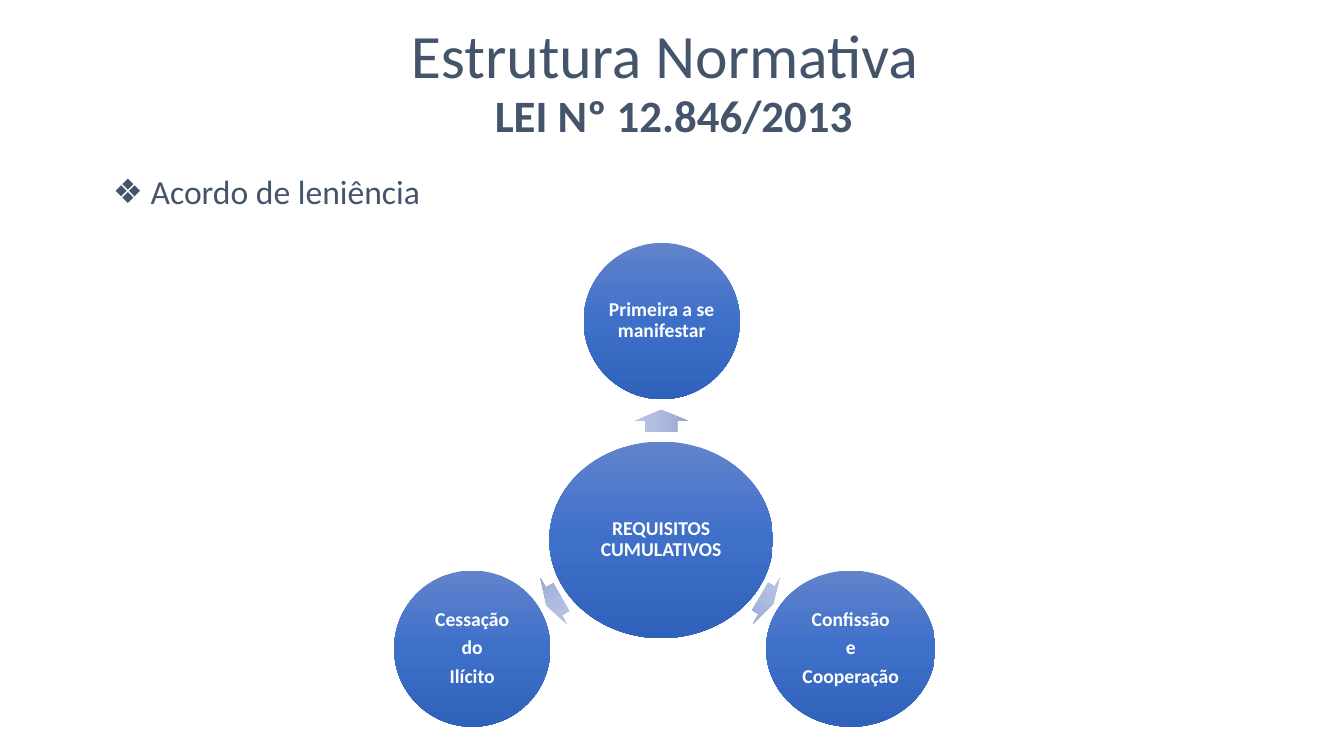
from copy import deepcopy
from typing import NamedTuple

from lxml import etree
from pptx import Presentation
from pptx.dml.color import RGBColor
from pptx.enum.shapes import MSO_SHAPE
from pptx.enum.text import MSO_ANCHOR, MSO_AUTO_SIZE, PP_ALIGN
from pptx.oxml.ns import qn
from pptx.util import Pt

ELLIPSE, ARROW = MSO_SHAPE.OVAL, MSO_SHAPE.RIGHT_ARROW
CENTER, LEFT = PP_ALIGN.CENTER, PP_ALIGN.LEFT
TOP, MIDDLE = MSO_ANCHOR.TOP, MSO_ANCHOR.MIDDLE
NO_AUTOFIT = MSO_AUTO_SIZE.NONE

FONT = "Calibri"
SLATE, WHITE = "44546A", "FFFFFF"
CIRCLE_GRADIENT = ("6183CB", "3E70CA", "3062BB")
ARROW_GRADIENT = ("BBC5E3", "AEBBE0", "97A5CA")
HEADING_FORMAT = {"alignment": CENTER, "line_spacing": 1.0, "space_before": Pt(0)}
LIST_FORMAT = {"alignment": LEFT, "line_spacing": 1.0, "space_before": Pt(4.8)}
CIRCLE_FORMAT = {"alignment": CENTER, "line_spacing": 0.9, "space_after": Pt(4.9)}
LIST_INDENT = Pt(27)


class Box(NamedTuple):
    left: float
    top: float
    width: float
    height: float


class Circle(NamedTuple):
    box: Box
    lines: tuple[str, ...]


class Spoke(NamedTuple):
    arrow: Box
    rotation: float
    circle: Circle


HUB = Circle(Box(392.4, 315.4, 159.8, 140.4), ("REQUISITOS CUMULATIVOS",))
SPOKES = (
    Spoke(Box(464.4, 281.5, 15.8, 38.2), 270,
          Circle(Box(416.9, 173.5, 111.6, 111.6), ("Primeira a se manifestar",))),
    Spoke(Box(542.2, 409.7, 10.8, 38.2), 30,
          Circle(Box(547.2, 407.5, 121, 111.6), ("Confissão", "e", "Cooperação"))),
    Spoke(Box(389.5, 410.4, 12.2, 38.2), 150,
          Circle(Box(281.5, 407.5, 111.6, 111.6), ("Cessação", "do", "Ilícito"))),
)


def color(value: str) -> RGBColor:
    return RGBColor.from_string(value)


def points(box: Box) -> list[Pt]:
    return [Pt(length) for length in box]


def place(shape, box: Box) -> None:
    shape.left, shape.top, shape.width, shape.height = points(box)


def write(shape, lines: tuple[str, ...], size: float, font_color: str,
          paragraph_format: dict, bold: bool = False, anchor=TOP) -> None:
    frame = shape.text_frame
    frame.text = "\n".join(lines)
    frame.word_wrap = True
    frame.auto_size = NO_AUTOFIT
    frame.vertical_anchor = anchor
    for paragraph in frame.paragraphs:
        for name, value in paragraph_format.items():
            setattr(paragraph, name, value)
        for run in paragraph.runs:
            for name, value in {"name": FONT, "size": Pt(size), "bold": bold}.items():
                setattr(run.font, name, value)
            run.font.color.rgb = color(font_color)


def set_bullet(paragraph, character: str) -> None:
    properties = paragraph._p.get_or_add_pPr()
    properties.set("marL", str(LIST_INDENT))
    properties.set("indent", str(-LIST_INDENT))
    etree.SubElement(properties, qn("a:buChar")).set("char", character)


def fill_gradient(shape, colors: tuple[str, ...]) -> None:
    """Fill from top to bottom with evenly spaced colours."""
    fill = shape.fill
    fill.gradient()
    fill.gradient_angle = 270
    stop_list = shape.element.spPr.find(qn("a:gradFill")).find(qn("a:gsLst"))
    while len(stop_list) < len(colors):
        stop_list.append(deepcopy(stop_list[0]))
    for index, (stop, value) in enumerate(zip(fill.gradient_stops, colors)):
        stop.position = index / (len(colors) - 1)
        stop.color.rgb = color(value)


def add_gradient_shape(slide, kind, box: Box, colors: tuple[str, ...]):
    shape = slide.shapes.add_shape(kind, *points(box))
    shape.shadow.inherit = False
    shape.line.fill.background()
    fill_gradient(shape, colors)
    return shape


def add_circle(slide, circle: Circle) -> None:
    shape = add_gradient_shape(slide, ELLIPSE, circle.box, CIRCLE_GRADIENT)
    for side in ("left", "top", "right", "bottom"):
        setattr(shape.text_frame, f"margin_{side}", Pt(1.4))
    write(shape, circle.lines, 14, WHITE, CIRCLE_FORMAT, bold=True, anchor=MIDDLE)


def add_spoke(slide, spoke: Spoke) -> None:
    arrow = add_gradient_shape(slide, ARROW, spoke.arrow, ARROW_GRADIENT)
    arrow.rotation = spoke.rotation
    arrow.adjustments[0], arrow.adjustments[1] = 0.6, 0.5
    add_circle(slide, spoke.circle)


def main() -> None:
    presentation = Presentation()
    presentation.slide_width, presentation.slide_height = Pt(960), Pt(540)
    slide = presentation.slides.add_slide(presentation.slide_layouts[1])

    title = slide.shapes.title
    place(title, Box(143.3, 8.6, 663.1, 56.2))
    write(title, ("Estrutura Normativa",), 44, SLATE, HEADING_FORMAT)

    law = slide.shapes.add_textbox(*points(Box(180.7, 59, 601.2, 45.4)))
    write(law, ("LEI Nº 12.846/2013",), 32, SLATE, HEADING_FORMAT, bold=True, anchor=MIDDLE)

    body = slide.placeholders[1]
    place(body, Box(73.4, 118.8, 648, 367.9))
    write(body, ("Acordo de leniência",), 24, SLATE, LIST_FORMAT)
    set_bullet(body.text_frame.paragraphs[0], "❖")

    add_circle(slide, HUB)
    for spoke in SPOKES:
        add_spoke(slide, spoke)

    presentation.save("out.pptx")


if __name__ == "__main__":
    main()
